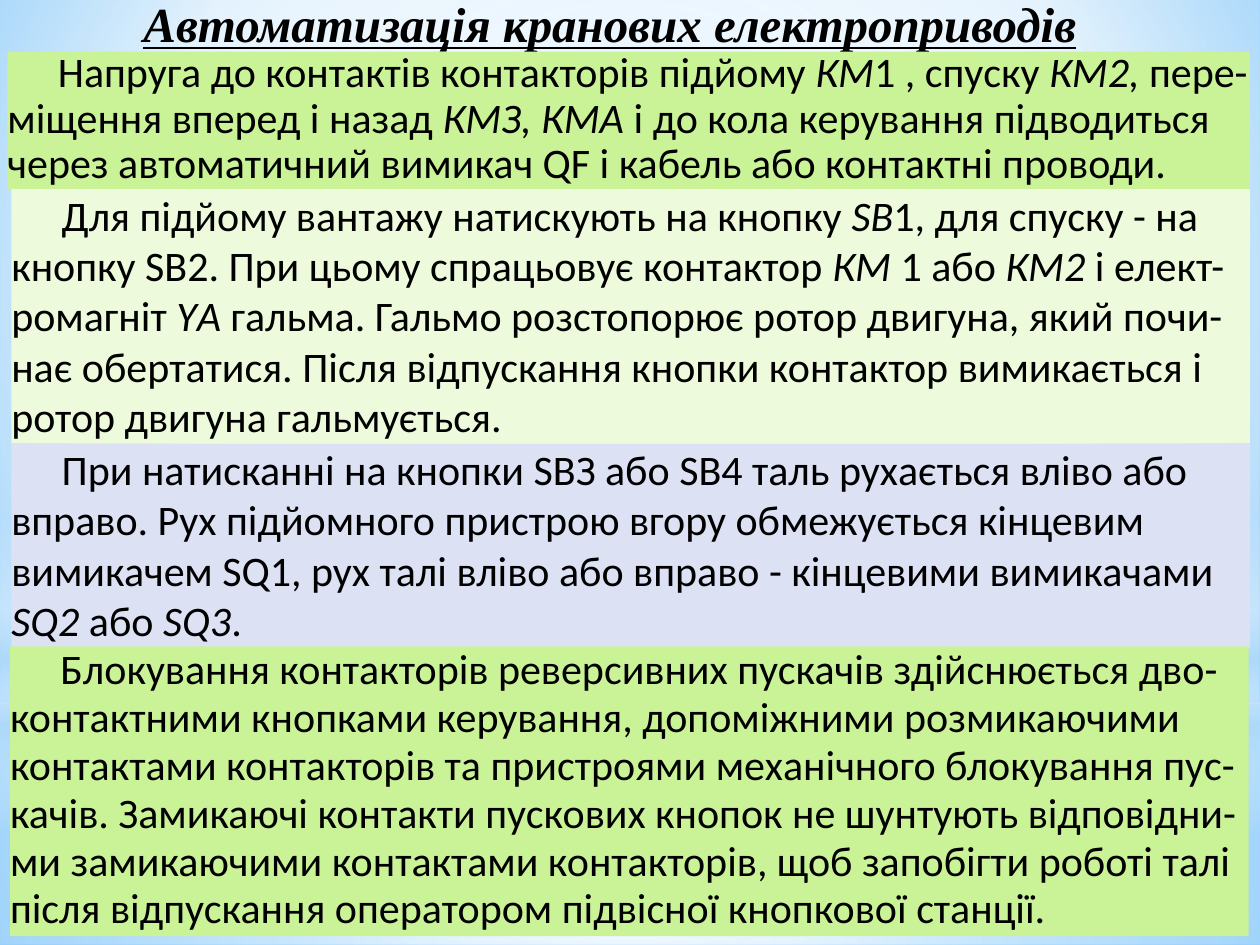
from lxml import etree
from pptx import Presentation
from pptx.dml.color import RGBColor
from pptx.enum.shapes import MSO_SHAPE as SHAPE
from pptx.enum.text import MSO_ANCHOR, MSO_AUTO_SIZE, PP_ALIGN
from pptx.oxml.ns import qn
from pptx.util import Inches, Pt

COLORS = {
    "text": "000000", "green": "CAF297", "pale": "EDFBDC", "lilac": "DCE1F4",
    "white": "FFFFFF", "haze": "B4DCFA", "sky": "9ED5FF", "blue": "5BB9FF",
}
CENTER = (50, 50, 50, 50)
BACKGROUND = [(0, "sky", 100), (60, "white", 100), (100, "blue", 100)]
WASHES = [
    (SHAPE.RECTANGLE, 5.58, 1.92, CENTER,
     [(0, "white", 91), (37, "white", 76), (100, "haze", 79)]),
    (SHAPE.RECTANGLE, 0, 5.58, CENTER,
     [(0, "white", 89), (48, "white", 62), (100, "haze", 79)]),
    (SHAPE.RECTANGLE, 4.12, 2.5, None,
     [(0, "white", 0), (29, "white", 30), (45, "haze", 40),
      (55, "white", 26), (65, "haze", 60), (100, "white", 0)]),
    (SHAPE.OVAL, 1.75, 5.58, CENTER, [(0, "white", 100), (56, "white", 0)]),
]
TITLE = "Автоматизація кранових електроприводів"
PANELS = [
    (0.06, 0.41, 9.86, 1.09, "green", 0.9,
     "Напруга до контактів контакторів підйому *КМ*1 , спуску *КМ2, *"
     "пере-міщення вперед і назад *КМЗ, КМА* і до кола керування підводиться "
     "через автоматичний вимикач QF і кабель або контактні проводи."),
    (0.09, 1.5, 9.83, 2.02, "pale", 1.0,
     "Для підйому вантажу натискують на кнопку *SВ*1, для спуску - на кнопку "
     "SВ2. При цьому спрацьовує контактор *КМ* 1 або *КМ2* і елект-ромагніт "
     "*YА* гальма. Гальмо розстопорює ротор двигуна, який почи-нає обертатися. "
     "Після відпускання кнопки контактор вимикається і ротор двигуна гальмується."),
    (0.09, 3.52, 9.83, 1.62, "lilac", 1.0,
     "При натисканні на кнопки SВЗ або SВ4 таль рухається вліво або вправо. "
     "Рух підйомного пристрою вгору обмежується кінцевим вимикачем SQ1, рух "
     "талі вліво або вправо - кінцевими вимикачами *SQ2* або *SQ3*."),
    (0.08, 5.13, 9.83, 2.3, "green", 0.95,
     "Блокування контакторів реверсивних пускачів здійснюється дво-контактними "
     "кнопками керування, допоміжними розмикаючими контактами контакторів та "
     "пристроями механічного блокування пус-качів. Замикаючі контакти пускових "
     "кнопок не шунтують відповідни-ми замикаючими контактами контакторів, щоб "
     "запобігти роботі талі після відпускання оператором підвісної кнопкової станції."),
]


def set_gradient(parent, stops, focus):
    """Replace the solid fill in parent with a circular or vertical gradient."""
    grad = etree.Element(qn("a:gradFill"), rotWithShape="1")
    gs_lst = etree.SubElement(grad, qn("a:gsLst"))
    for pos, color, opacity in stops:
        gs = etree.SubElement(gs_lst, qn("a:gs"), pos=str(pos * 1000))
        clr = etree.SubElement(gs, qn("a:srgbClr"), val=COLORS[color])
        if opacity < 100:
            etree.SubElement(clr, qn("a:alpha"), val=str(opacity * 1000))
    if focus:
        circle = etree.SubElement(grad, qn("a:path"), path="circle")
        sides = {side: str(v * 1000) for side, v in zip("ltrb", focus)}
        etree.SubElement(circle, qn("a:fillToRect"), **sides)
    else:
        etree.SubElement(grad, qn("a:lin"), ang="5400000", scaled="0")
    parent.replace(parent.find(qn("a:solidFill")), grad)


def add_block(s, kind, x, y, w, h, color):
    """Add a filled shape without outline or shadow."""
    sp = s.shapes.add_shape(kind, Inches(x), Inches(y), Inches(w), Inches(h))
    sp.shadow.inherit = False
    sp.fill.solid()
    sp.fill.fore_color.rgb = RGBColor.from_string(COLORS[color])
    sp.line.fill.background()
    return sp


def setup_frame(tf):
    """Remove the insets, anchor at the top and fit the shape to its text."""
    tf.margin_left = tf.margin_top = tf.margin_right = tf.margin_bottom = 0
    tf.word_wrap = True
    tf.vertical_anchor = MSO_ANCHOR.TOP
    tf.auto_size = MSO_AUTO_SIZE.SHAPE_TO_FIT_TEXT


def style_run(r, font, size, italic):
    """Set the font of a run."""
    r.font.name, r.font.size, r.font.italic = font, Pt(size), italic
    r.font.color.rgb = RGBColor.from_string(COLORS["text"])


def add_background(s):
    """Paint the slide background and the translucent washes over it."""
    s.background.fill.solid()
    set_gradient(s.element.find(".//" + qn("p:bgPr")), BACKGROUND, (20, 10, 20, 60))
    for kind, y, h, focus, stops in WASHES:
        sp = add_block(s, kind, 0, y, 10, h, "white")
        set_gradient(sp.element.spPr, stops, focus)


def add_panel(s, x, y, w, h, color, spacing, text):
    """Add a coloured paragraph panel; asterisks enclose italic text."""
    tf = add_block(s, SHAPE.RECTANGLE, x, y, w, h, color).text_frame
    setup_frame(tf)
    p = tf.paragraphs[0]
    p.alignment, p.line_spacing = PP_ALIGN.LEFT, spacing
    pPr = p._p.get_or_add_pPr()
    pPr.set("marL", "0")
    pPr.set("indent", str(Inches(0.4)))
    for i, part in enumerate(text.split("*")):
        if part:
            r = p.add_run()
            r.text = part
            style_run(r, "Calibri", 24, i % 2 == 1)


def set_title(s):
    """Place the title in front of the washes and format it."""
    sp = s.shapes.title
    s.shapes.element.append(sp.element)
    sp.left, sp.top, sp.width, sp.height = map(Inches, (0.59, 0.02, 8.5, 0.4))
    tf = sp.text_frame
    tf.text = TITLE
    setup_frame(tf)
    p = tf.paragraphs[0]
    p.alignment, p.line_spacing = PP_ALIGN.CENTER, 0.85
    r = p.runs[0]
    style_run(r, "Times New Roman", 28, True)
    r.font.bold = r.font.underline = True


def main():
    """Build and save the slide."""
    prs = Presentation()
    prs.slide_width, prs.slide_height = Inches(10), Inches(7.5)
    s = prs.slides.add_slide(prs.slide_layouts[5])
    add_background(s)
    set_title(s)
    for panel in PANELS:
        add_panel(s, *panel)
    prs.save("out.pptx")


if __name__ == "__main__":
    main()
